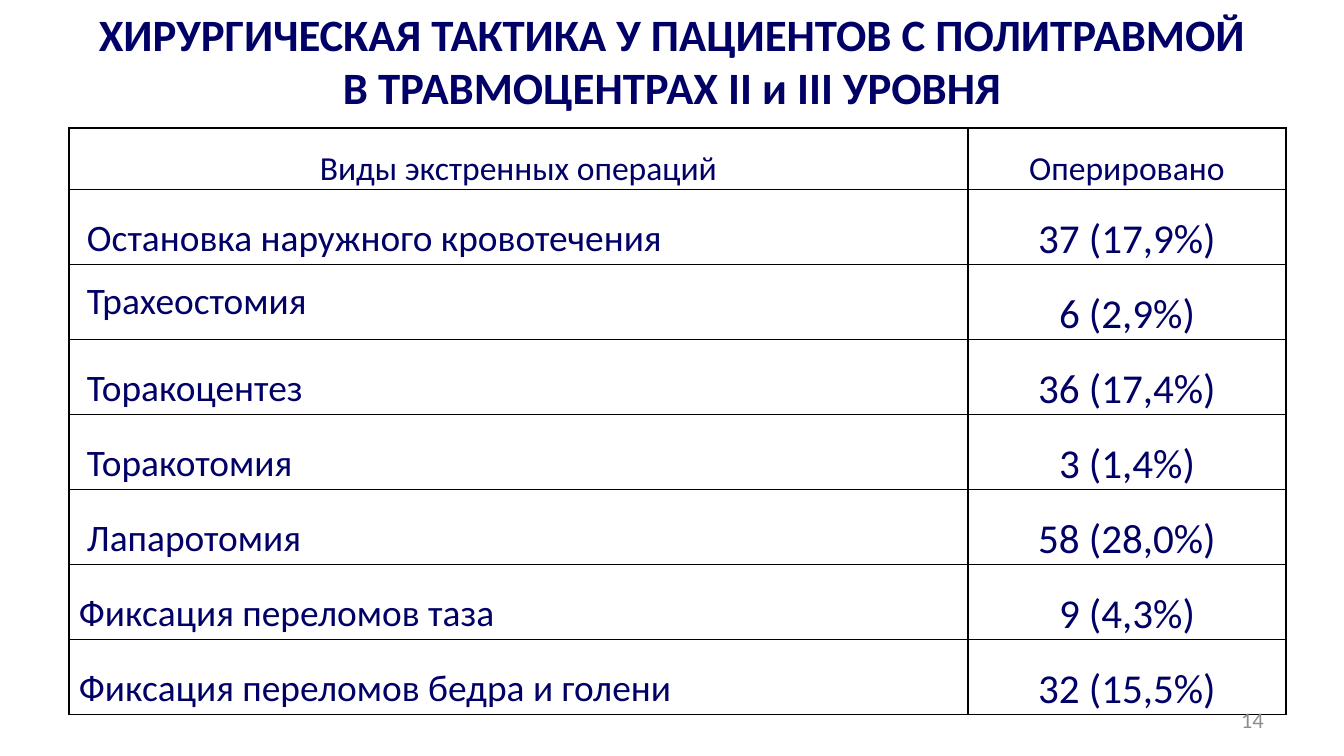
from lxml import etree
from pptx import Presentation
from pptx.dml.color import RGBColor
from pptx.enum.text import MSO_ANCHOR, MSO_AUTO_SIZE, PP_ALIGN
from pptx.oxml.ns import qn
from pptx.util import Emu, Pt

MID = MSO_ANCHOR.MIDDLE
NOFIT = MSO_AUTO_SIZE.NONE
LEFT, MID_X, RIGHT = PP_ALIGN.LEFT, PP_ALIGN.CENTER, PP_ALIGN.RIGHT
FONT = "Calibri"
HEX = {"navy": "000066", "white": "FFFFFF", "black": "000000", "gray": "8C8C8C"}
EDGES = ("a:lnL", "a:lnR", "a:lnT", "a:lnB")

TITLE = (
    "ХИРУРГИЧЕСКАЯ ТАКТИКА У ПАЦИЕНТОВ С ПОЛИТРАВМОЙ",
    "В ТРАВМОЦЕНТРАХ II и III УРОВНЯ",
)
HEADS = ("Виды экстренных операций", "Оперировано")
CARE = (
    ("Остановка наружного кровотечения", "37 (17,9%)"),
    ("Трахеостомия", "6 (2,9%)"),
    ("Торакоцентез", "36 (17,4%)"),
    ("Торакотомия", "3 (1,4%)"),
    ("Лапаротомия", "58 (28,0%)"),
)
FIXES = (
    ("Фиксация переломов таза", "9 (4,3%)"),
    ("Фиксация переломов бедра и голени", "32 (15,5%)"),
)
TIGHT = "Трахеостомия"


def px(count):
    """Turn whole pixels into EMU."""
    return Emu(round(count * 914400 / 134.4))


def color(name):
    """Look up a palette colour."""
    return RGBColor.from_string(HEX[name])


def add_run(para, text, size, tint="navy", bold=False):
    """Add one formatted run to a paragraph."""
    run = para.add_run()
    run.text = text
    font = run.font
    font.name, font.size, font.bold = FONT, Pt(size), bold
    font.color.rgb = color(tint)


def add_title(slide, left, top, width, height):
    """Fill the title placeholder within a box."""
    title = slide.shapes.title
    title.left, title.top = px(left), px(top)
    title.width, title.height = px(width), px(height)
    frame = title.text_frame
    frame.auto_size, frame.vertical_anchor = NOFIT, MID
    frame.margin_left = frame.margin_right = px(5)
    frame.margin_top = frame.margin_bottom = px(5)
    para = frame.paragraphs[0]
    para.alignment = MID_X
    for row, line in enumerate(TITLE):
        if row:
            para.add_line_break()
        add_run(para, line, 24, bold=True)


def frame_cell(cell):
    """Draw thin lines round a cell and fill it."""
    props = cell._tc.get_or_add_tcPr()
    for edge in EDGES:
        line = etree.SubElement(props, qn(edge), w=str(Pt(1)))
        paint = etree.SubElement(line, qn("a:solidFill"))
        etree.SubElement(paint, qn("a:srgbClr"), val=HEX["black"])
    cell.fill.solid()
    cell.fill.fore_color.rgb = color("white")


def fill_cell(cell, text, size, align=MID_X, space=1.5, inset=0):
    """Format a table cell and write its text."""
    frame_cell(cell)
    cell.vertical_anchor = MID
    cell.margin_left, cell.margin_right = px(10 + inset), px(10)
    cell.margin_top = cell.margin_bottom = 0
    para = cell.text_frame.paragraphs[0]
    para.alignment, para.line_spacing = align, space
    add_run(para, text, size)


def add_grid(slide, left, top, width, height):
    """Build the table of operations within a box."""
    rows = CARE + FIXES
    count, head, side = len(rows), 61, 318
    shape = slide.shapes.add_table(
        count + 1, 2, px(left), px(top), px(width), px(height)
    )
    table = shape.table
    table.first_row = table.horz_banding = False
    table.columns[0].width, table.columns[1].width = px(width - side), px(side)
    table.rows[0].height = px(head)
    for col, text in enumerate(HEADS):
        fill_cell(table.cell(0, col), text, 18)
    for row, (name, value) in enumerate(rows, 1):
        table.rows[row].height = px((height - head) // count)
        space = 1.0 if name == TIGHT else 1.5
        inset = 8 if row <= len(CARE) else 0
        fill_cell(table.cell(row, 0), name, 20, LEFT, space, inset)
        fill_cell(table.cell(row, 1), value, 22)


def add_page(slide, left, top, width, height):
    """Write the page number within a box."""
    box = slide.shapes.add_textbox(px(left), px(top), px(width), px(height))
    frame = box.text_frame
    frame.word_wrap, frame.vertical_anchor = True, MID
    para = frame.paragraphs[0]
    para.alignment = RIGHT
    add_run(para, "14", 12, "gray")


def main():
    """Build and save the slide."""
    deck = Presentation()
    deck.slide_width, deck.slide_height = px(1344), px(756)
    slide = deck.slides.add_slide(deck.slide_layouts[5])
    add_title(slide, 67, -3, 1210, 126)
    add_grid(slide, 69, 128, 1217, 586)
    add_page(slide, 964, 700, 313, 40)
    deck.save("out.pptx")


if __name__ == "__main__":
    main()
